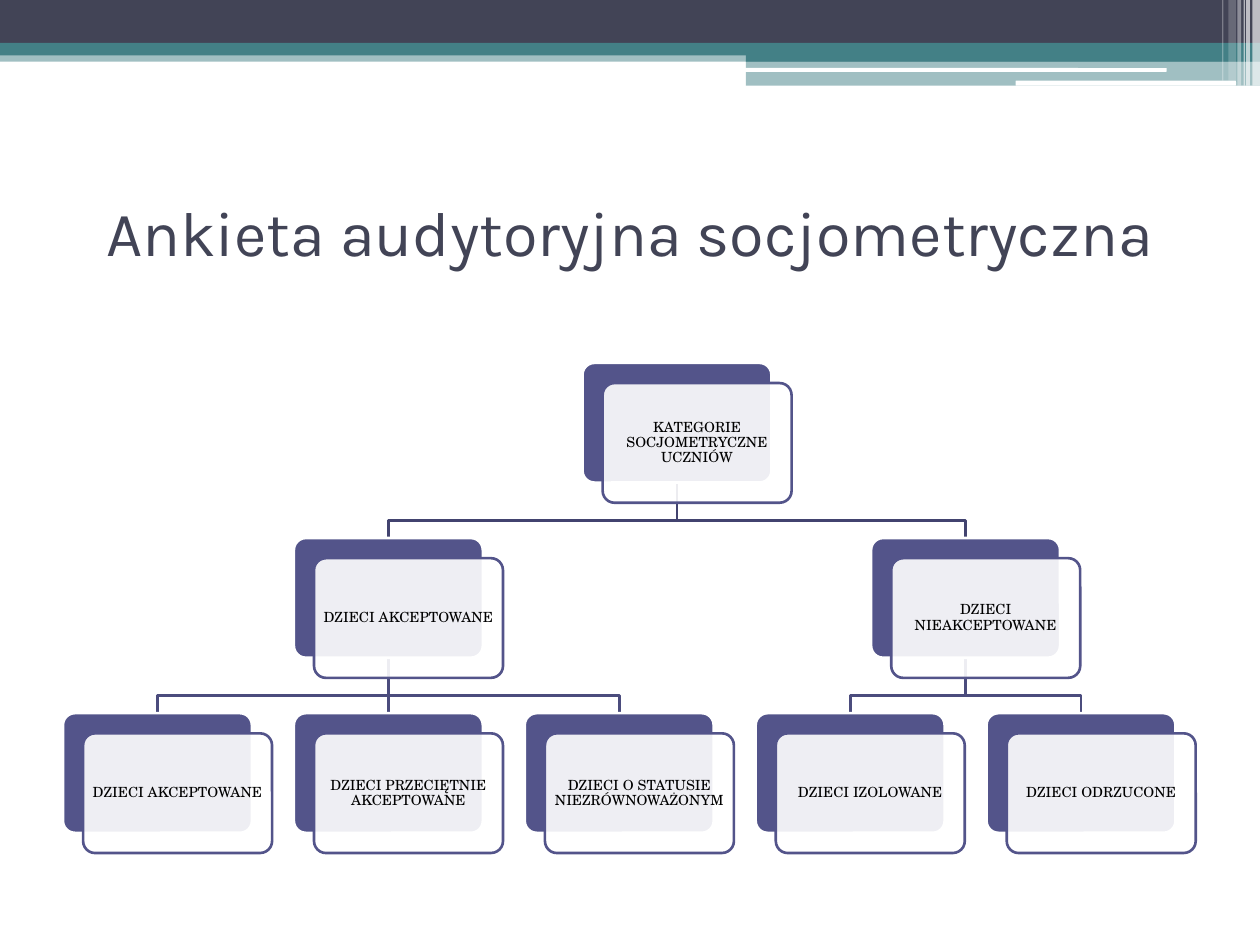
from dataclasses import dataclass, field

from lxml import etree
from pptx import Presentation
from pptx.dml.color import RGBColor
from pptx.enum import shapes, text
from pptx.oxml.ns import qn
from pptx.util import Inches, Pt


@dataclass(frozen=True)
class Theme:
    navy: str = "424456"
    teal: str = "438086"
    white: str = "FFFFFF"
    black: str = "000000"
    card: str = "53548A"
    root_link: str = "42436F"
    branch_link: str = "4B4C7D"
    title_font: str = "Karla"
    card_font: str = "TeX Gyre Schola"
    title_size: int = 36
    card_size: int = 8
    line_width: float = 1.5


@dataclass
class Category:
    label: str
    children: list = field(default_factory=list)
    x: float = 0
    y: float = 0
    card: object = None


THEME = Theme()
RECT = shapes.MSO_SHAPE.RECTANGLE
ROUNDED = shapes.MSO_SHAPE.ROUNDED_RECTANGLE
CARD_W, CARD_H = 1.5, 0.95
PANEL_OFFSET = 0.16
LEVEL_STEP = 1.39
LINK_BEND = 0.3

CATEGORIES = Category("KATEGORIE SOCJOMETRYCZNE UCZNIÓW", [
    Category("DZIECI AKCEPTOWANE", [
        Category("DZIECI AKCEPTOWANE"),
        Category("DZIECI PRZECIĘTNIE AKCEPTOWANE"),
        Category("DZIECI O STATUSIE NIEZRÓWNOWAŻONYM"),
    ]),
    Category("DZIECI NIEAKCEPTOWANE", [
        Category("DZIECI IZOLOWANE"),
        Category("DZIECI ODRZUCONE"),
    ]),
])


def add_block(slide, preset, box, color, opacity=100, outline=None, rounding=None):
    block = slide.shapes.add_shape(preset, *map(Inches, box))
    block.shadow.inherit = False
    block.fill.solid()
    block.fill.fore_color.rgb = RGBColor.from_string(color)
    if opacity < 100:
        tint = block.fill._xPr.find(".//" + qn("a:srgbClr"))
        etree.SubElement(tint, qn("a:alpha"), val=str(opacity * 1000))
    if outline:
        style_line(block.line, outline)
    else:
        block.line.fill.background()
    if rounding is not None:
        block.adjustments[0] = rounding
    return block


def style_line(line, color):
    line.color.rgb = RGBColor.from_string(color)
    line.width = Pt(THEME.line_width)


def write_text(frame, wording, font, size, color):
    frame.word_wrap = True
    frame.vertical_anchor = text.MSO_ANCHOR.MIDDLE
    frame.text = wording
    paragraph = frame.paragraphs[0]
    paragraph.alignment = text.PP_ALIGN.CENTER
    run_font = paragraph.runs[0].font
    run_font.name = font
    run_font.size = Pt(size)
    run_font.color.rgb = RGBColor.from_string(color)
    return paragraph


def add_header(slide, left, top, width):
    """Layered bands across the top, with a split strip and stripes at the right."""
    right = left + width
    split = 5.92
    bands = [
        (left, 0.4, width, 0.09, THEME.teal, 50),
        (left, 0, width, 0.34, THEME.navy, 100),
        (left, 0.34, width, 0.1, THEME.teal, 100),
        (left + split, 0.39, width - split, 0.1, THEME.teal, 100),
        (left + split, 0.48, width - split, 0.2, THEME.teal, 50),
    ]
    for x, y, w, h, color, opacity in bands:
        add_block(slide, RECT, (x, top + y, w, h), color, opacity)

    for x, y, w, h in [(5.91, 0.54, 3.35, 0.03), (8.06, 0.64, 1.75, 0.04)]:
        add_block(slide, ROUNDED, (left + x, top + y, w, h), THEME.white, rounding=0.167)

    stripes = [
        (0.06, 0.06, 0.68, 65),
        (0.11, 0.03, 0.68, 65),
        (0.13, 0.01, 0.68, 60),
        (0.18, 0.03, 0.68, 40),
        (0.25, 0.06, 0.64, 20),
        (0.3, 0.01, 0.64, 30),
    ]
    for from_right, w, h, opacity in stripes:
        add_block(slide, RECT, (right - from_right, top, w, h), THEME.white, opacity)


def add_title(slide, box, wording):
    title = slide.shapes.add_textbox(*map(Inches, box))
    write_text(title.text_frame, wording, THEME.title_font, THEME.title_size, THEME.navy)


def walk(category):
    yield category
    for child in category.children:
        yield from walk(child)


def arrange(category, leaf_positions, y):
    """Place leaves in even columns and each parent midway over its children."""
    category.y = y
    for child in category.children:
        arrange(child, leaf_positions, y + LEVEL_STEP)
    if category.children:
        category.x = (category.children[0].x + category.children[-1].x) / 2
    else:
        category.x = next(leaf_positions)


def add_link(slide, parent, child, color):
    """Draw a bent link, or return a straight connector to a child right below."""
    start_x, end_x = (Inches(node.x + CARD_W / 2) for node in (parent, child))
    start_y = Inches(parent.y + CARD_H)
    bend_y = Inches(parent.y + CARD_H + LINK_BEND)
    end_y = Inches(child.y)
    if abs(start_x - end_x) < Inches(0.01):
        link = slide.shapes.add_connector(
            shapes.MSO_CONNECTOR.STRAIGHT, start_x, start_y, end_x, end_y)
        etree.SubElement(link._element.spPr, qn("a:effectLst"))
        style_line(link.line, color)
        return link
    outline = slide.shapes.build_freeform(start_x, start_y)
    outline.add_line_segments(
        [(start_x, bend_y), (end_x, bend_y), (end_x, end_y)], close=False)
    link = outline.convert_to_shape()
    link.shadow.inherit = False
    link.fill.background()
    style_line(link.line, color)
    return None


def add_card(slide, category):
    x, y = category.x, category.y
    category.card = add_block(slide, ROUNDED, (x, y, CARD_W, CARD_H), THEME.card,
                              outline=THEME.white, rounding=0.1)
    panel = add_block(slide, ROUNDED, (x + PANEL_OFFSET, y + PANEL_OFFSET, CARD_W, CARD_H),
                      THEME.white, 90, THEME.card, 0.1)
    frame = panel.text_frame
    frame.margin_left = frame.margin_right = Inches(0.03)
    frame.margin_top = frame.margin_bottom = Inches(0.03)
    label = write_text(frame, category.label, THEME.card_font, THEME.card_size, THEME.black)
    label.line_spacing = 0.9


def add_hierarchy(slide, left, top, width, root):
    leaf_count = sum(not node.children for node in walk(root))
    step = (width - CARD_W - PANEL_OFFSET) / (leaf_count - 1)
    arrange(root, iter([left + i * step for i in range(leaf_count)]), top)

    straight_links = []
    for parent in walk(root):
        color = THEME.root_link if parent is root else THEME.branch_link
        for child in parent.children:
            link = add_link(slide, parent, child, color)
            if link is not None:
                straight_links.append((link, parent, child))
    for category in walk(root):
        add_card(slide, category)
    for link, parent, child in straight_links:
        link.begin_connect(parent.card, 2)
        link.end_connect(child.card, 0)


def main():
    deck = Presentation()
    deck.slide_width, deck.slide_height = Inches(10), Inches(7.5)
    slide = deck.slides.add_slide(deck.slide_layouts[6])
    add_header(slide, 0, 0, 10)
    add_title(slide, (0.5, 1.25, 9, 1.17), "Ankieta audytoryjna socjometryczna")
    add_hierarchy(slide, 0.5, 2.88, 8.99, CATEGORIES)
    deck.save("out.pptx")


if __name__ == "__main__":
    main()
